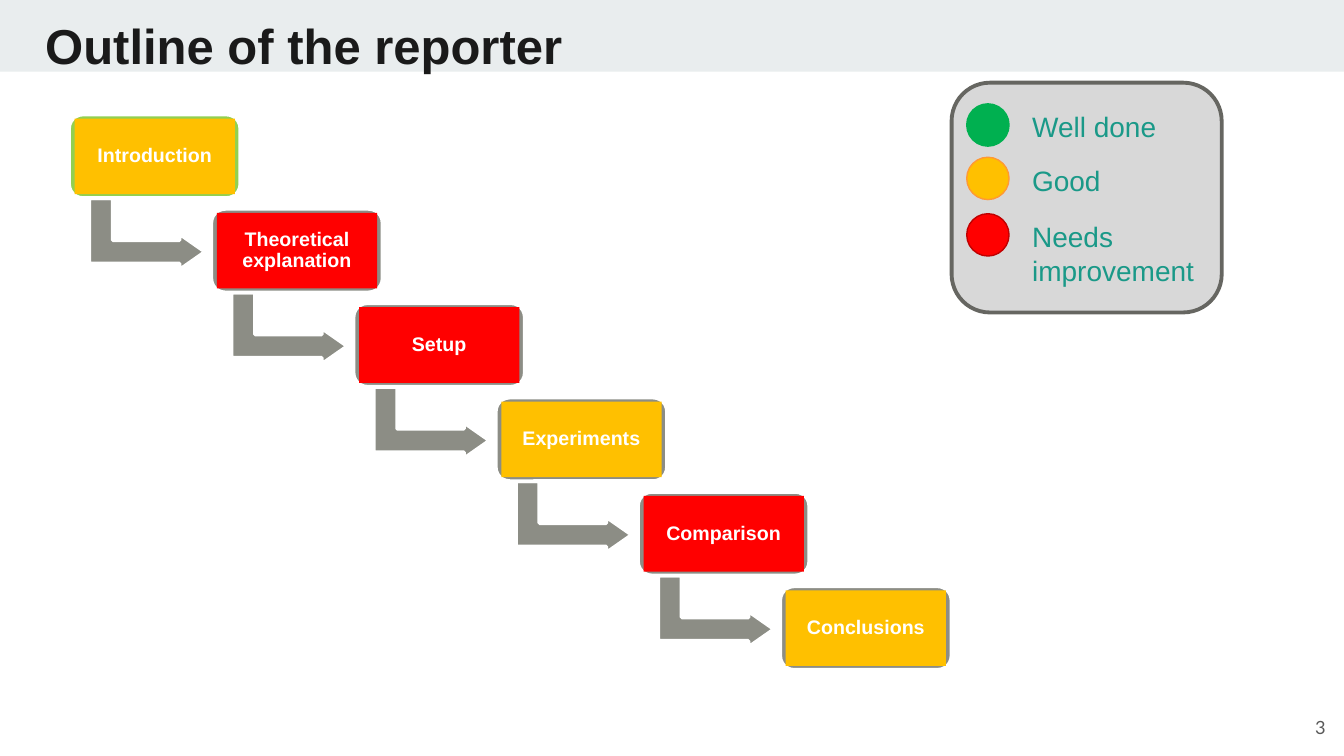
from pptx import Presentation
from pptx.dml.color import RGBColor
from pptx.enum.shapes import MSO_SHAPE
from pptx.enum.text import MSO_ANCHOR, PP_ALIGN
from pptx.util import Inches, Pt

COLUMNS, ROWS, CELL = 133.33, 75, 0.1
STEP_COLUMNS, STEP_ROWS = 14.11, 9.36
WHITE, GREY, GREEN, AMBER, RED = "FFFFFF", "8C8D85", "00B050", "FFC000", "FF0000"
STEPS = [
    ("Introduction", AMBER, "92D050"),
    ("Theoretical explanation", RED, GREY),
    ("Setup", RED, GREY),
    ("Experiments", AMBER, GREY),
    ("Comparison", RED, GREY),
    ("Conclusions", AMBER, GREY),
]
RATINGS = [
    ("Well done", GREEN, GREEN, 10.3, 4.4),
    ("Good", AMBER, "FF9933", 15.6, 4.4),
    ("Needs improvement", RED, "C00000", 21.2, 7.7),
]


def color(value):
    """Turn a hex string into a colour."""
    return RGBColor.from_string(value)


def place(*cells):
    """Turn grid columns and rows into lengths."""
    return [Inches(cell * CELL) for cell in cells]


def add_figure(page, kind, area, fill, line=None, width=2.75, adjustments=()):
    """Add a filled preset shape, outlined when a line colour is given."""
    figure = page.shapes.add_shape(kind, *place(*area))
    figure.shadow.inherit = False
    figure.fill.solid()
    figure.fill.fore_color.rgb = color(fill)
    if line:
        figure.line.color.rgb = color(line)
        figure.line.width = Pt(width)
    else:
        figure.line.fill.background()
    for index, value in enumerate(adjustments):
        figure.adjustments[index] = value
    return figure


def write(box, text, size, ink, font="Arial", bold=False, align=PP_ALIGN.LEFT,
          anchor=MSO_ANCHOR.TOP, spacing=None):
    """Fill a box with one styled paragraph."""
    frame = box.text_frame
    frame.word_wrap = True
    frame.vertical_anchor = anchor
    para = frame.paragraphs[0]
    para.text = text
    para.alignment = align
    para.line_spacing = spacing
    para.font.name = font
    para.font.size = Pt(size)
    para.font.bold = bold
    para.font.color.rgb = color(ink)


def add_label(page, area, text, size, ink, **style):
    """Add a text box."""
    write(page.shapes.add_textbox(*place(*area)), text, size, ink, **style)


def add_step(page, index, text, fill, frame_fill):
    """Add one stair of the outline, with an arrow to the next stair."""
    left, top = 6.85 + index * STEP_COLUMNS, 11.36 + index * STEP_ROWS
    if index < len(STEPS) - 1:
        arrow = add_figure(page, MSO_SHAPE.BENT_UP_ARROW,
                           (left + 4.2, top + 6.1, 7.1, 11.5), GREY, WHITE,
                           adjustments=(0.328, 0.25, 0.358))
        arrow.rotation = 90
    add_figure(page, MSO_SHAPE.ROUNDED_RECTANGLE, (left, top, 17, 8.3),
               frame_fill, WHITE, adjustments=(0.167,))
    panel = add_figure(page, MSO_SHAPE.RECTANGLE,
                       (left + 0.55, top + 0.4, 15.9, 7.5), fill)
    frame = panel.text_frame
    frame.margin_left = frame.margin_right = Inches(0.06)
    frame.margin_top = frame.margin_bottom = Inches(0.06)
    write(panel, text, 14, WHITE, bold=True, align=PP_ALIGN.CENTER,
          anchor=MSO_ANCHOR.MIDDLE, spacing=0.9)


def add_legend(page):
    """Add the key to the rating colours."""
    add_figure(page, MSO_SHAPE.ROUNDED_RECTANGLE, (94.4, 8.2, 26.8, 22.8),
               "D8D8D8", "666661", adjustments=(0.167,))
    for text, fill, line, top, height in RATINGS:
        add_figure(page, MSO_SHAPE.OVAL, (95.9, top, 4.2, 4.2), fill, line, 1)
        add_label(page, (101.4, top + 0.1, 21.4, height), text, 20, "1A9988")


def main():
    """Build the slide and save it."""
    deck = Presentation()
    deck.slide_width, deck.slide_height = place(COLUMNS, ROWS)
    page = deck.slides.add_slide(deck.slide_layouts[6])
    add_figure(page, MSO_SHAPE.RECTANGLE, (0, 0, COLUMNS, 7.1), "E9EDEE")
    add_label(page, (3.5, 1.8, 124.2, 9.6), "Outline of the reporter", 35,
              "1A1A1A", bold=True, spacing=0.89)
    for index, step in enumerate(STEPS):
        add_step(page, index, *step)
    add_label(page, (124.5, 69.3, 8, 5.7), "3", 13, "595959", font="Lato",
              align=PP_ALIGN.RIGHT, anchor=MSO_ANCHOR.MIDDLE)
    add_legend(page)
    deck.save("out.pptx")


if __name__ == "__main__":
    main()
